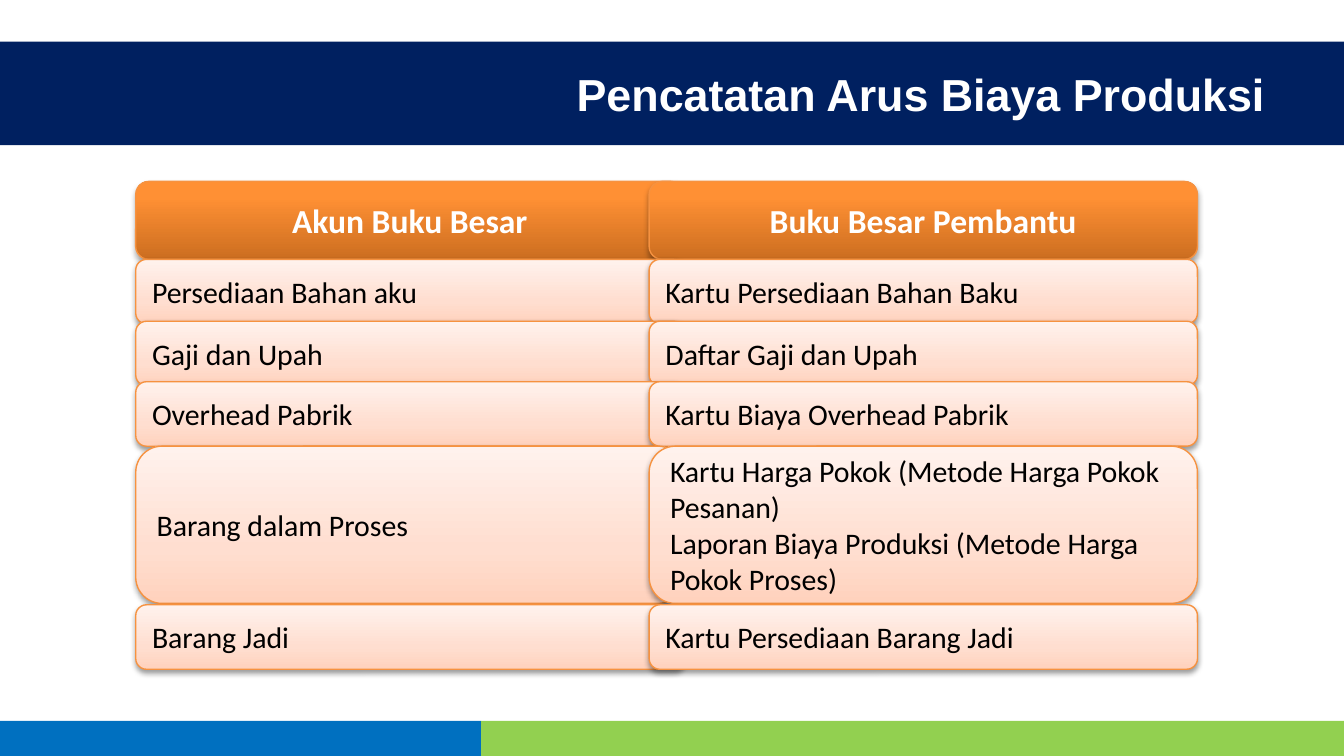
from dataclasses import dataclass

from lxml import etree
from pptx import Presentation
from pptx.dml.color import RGBColor
from pptx.enum.shapes import MSO_SHAPE
from pptx.enum.text import MSO_ANCHOR, PP_ALIGN
from pptx.util import Inches, Pt

RECT, ROUNDED = MSO_SHAPE.RECTANGLE, MSO_SHAPE.ROUNDED_RECTANGLE
MIDDLE = MSO_ANCHOR.MIDDLE
LEFT, CENTER, RIGHT = PP_ALIGN.LEFT, PP_ALIGN.CENTER, PP_ALIGN.RIGHT
TITLE_ONLY = 5
A = "http://schemas.openxmlformats.org/drawingml/2006/main"

TITLE = "Pencatatan Arus Biaya Produksi"
HEADER = ("Akun Buku Besar", "Buku Besar Pembantu")
ROWS = [
    ("Persediaan Bahan aku", "Kartu Persediaan Bahan Baku"),
    ("Gaji dan Upah", "Daftar Gaji dan Upah"),
    ("Overhead Pabrik", "Kartu Biaya Overhead Pabrik"),
    ("Barang dalam Proses",
     "Kartu Harga Pokok (Metode Harga Pokok Pesanan)\n"
     "Laporan Biaya Produksi (Metode Harga Pokok Proses)"),
    ("Barang Jadi", "Kartu Persediaan Barang Jadi"),
]

# Inches
WIDTH = 10
HEIGHT = WIDTH * 9 / 16
BAND_TOP, BAND_HEIGHT = 0.31, 0.77
FOOTER_HEIGHT, FOOTER_SPLIT = 0.26, 3.58
GRID_TOP, COLUMNS, CARD_WIDTH = 1.35, (1.01, 4.83), 4.08
HEADER_HEIGHT, ROW_HEIGHTS = 0.58, (0.48, 0.48, 0.48, 1.17, 0.48)
ROW_STEPS = (0.46, 0.45, 0.48, 1.18, 0.48)  # compact rows overlap slightly


@dataclass(frozen=True)
class CardStyle:
    stops: tuple  # (percent, colour), from bottom to top
    shadow_alpha: int
    shadow_distance: float
    size: int
    color: str
    bold: bool
    align: PP_ALIGN


class Theme:
    navy, blue, green = "002060", "0070C0", "92D050"
    white, border = "FFFFFF", "F69240"
    title_font, card_font = "Arial", "Calibri"
    title_size, border_width, shadow_blur = 24, 0.75, 3.1
    header = CardStyle(((0, "CC6E20"), (80, "FF9034"), (100, "FF9136")),
                       35, 1.8, 18, "FFFFFF", True, CENTER)
    row = CardStyle(((0, "FFD2BD"), (35, "FFDED0"), (100, "FFF2ED")),
                    38, 1.6, 16, "000000", False, LEFT)


def format_text(tf, font, size, color, bold, align):
    tf.word_wrap = True
    tf.vertical_anchor = MIDDLE
    for p in tf.paragraphs:
        p.alignment = align
        p.font.name, p.font.size, p.font.bold = font, Pt(size), bold
        p.font.color.rgb = RGBColor.from_string(color)


def add_band(s, left, top, width, height, color):
    sp = s.shapes.add_shape(RECT, *map(Inches, (left, top, width, height)))
    sp.shadow.inherit = False
    sp.fill.solid()
    sp.fill.fore_color.rgb = RGBColor.from_string(color)
    sp.line.fill.background()


def paint_card(sp, style):
    """Give the card its border, three-stop gradient and soft shadow."""
    sp.line.color.rgb = RGBColor.from_string(Theme.border)
    sp.line.width = Pt(Theme.border_width)
    stops = "".join(
        f'<a:gs pos="{pos * 1000}"><a:srgbClr val="{color}"/></a:gs>'
        for pos, color in style.stops)
    gradient = etree.fromstring(
        f'<a:gradFill xmlns:a="{A}" rotWithShape="1"><a:gsLst>{stops}</a:gsLst>'
        f'<a:lin ang="16200000" scaled="0"/></a:gradFill>')
    effects = etree.fromstring(
        f'<a:effectLst xmlns:a="{A}"><a:outerShdw '
        f'blurRad="{Pt(Theme.shadow_blur)}" dist="{Pt(style.shadow_distance)}" '
        f'dir="5400000" rotWithShape="0"><a:srgbClr val="000000">'
        f'<a:alpha val="{style.shadow_alpha * 1000}"/></a:srgbClr>'
        f'</a:outerShdw></a:effectLst>')
    properties = sp._element.spPr
    properties.find(f"{{{A}}}ln").addprevious(gradient)
    properties.append(effects)


def add_card_row(s, top, height, texts, style):
    for left, text in zip(COLUMNS, texts):
        sp = s.shapes.add_shape(
            ROUNDED, *map(Inches, (left, top, CARD_WIDTH, height)))
        paint_card(sp, style)
        sp.text_frame.text = text
        format_text(sp.text_frame, Theme.card_font, style.size, style.color,
                    style.bold, style.align)


def add_title(s):
    sp = s.shapes.title
    sp.left, sp.top, sp.width, sp.height = map(
        Inches, (1.66, BAND_TOP, 7.85, BAND_HEIGHT))
    sp.text_frame.text = TITLE
    format_text(sp.text_frame, Theme.title_font, Theme.title_size,
                Theme.white, True, RIGHT)
    s.shapes._spTree.append(sp._element)  # in front of its band


def main():
    prs = Presentation()
    prs.slide_width, prs.slide_height = Inches(WIDTH), Inches(HEIGHT)
    s = prs.slides.add_slide(prs.slide_layouts[TITLE_ONLY])

    footer_top = HEIGHT - FOOTER_HEIGHT
    add_band(s, 0, footer_top, FOOTER_SPLIT, FOOTER_HEIGHT, Theme.blue)
    add_band(s, FOOTER_SPLIT, footer_top, WIDTH - FOOTER_SPLIT, FOOTER_HEIGHT,
             Theme.green)
    add_band(s, 0, BAND_TOP, WIDTH, BAND_HEIGHT, Theme.navy)
    add_title(s)

    add_card_row(s, GRID_TOP, HEADER_HEIGHT, HEADER, Theme.header)
    top = GRID_TOP + HEADER_HEIGHT
    for texts, height, step in zip(ROWS, ROW_HEIGHTS, ROW_STEPS):
        add_card_row(s, top, height, texts, Theme.row)
        top += step

    prs.save("out.pptx")


if __name__ == "__main__":
    main()
